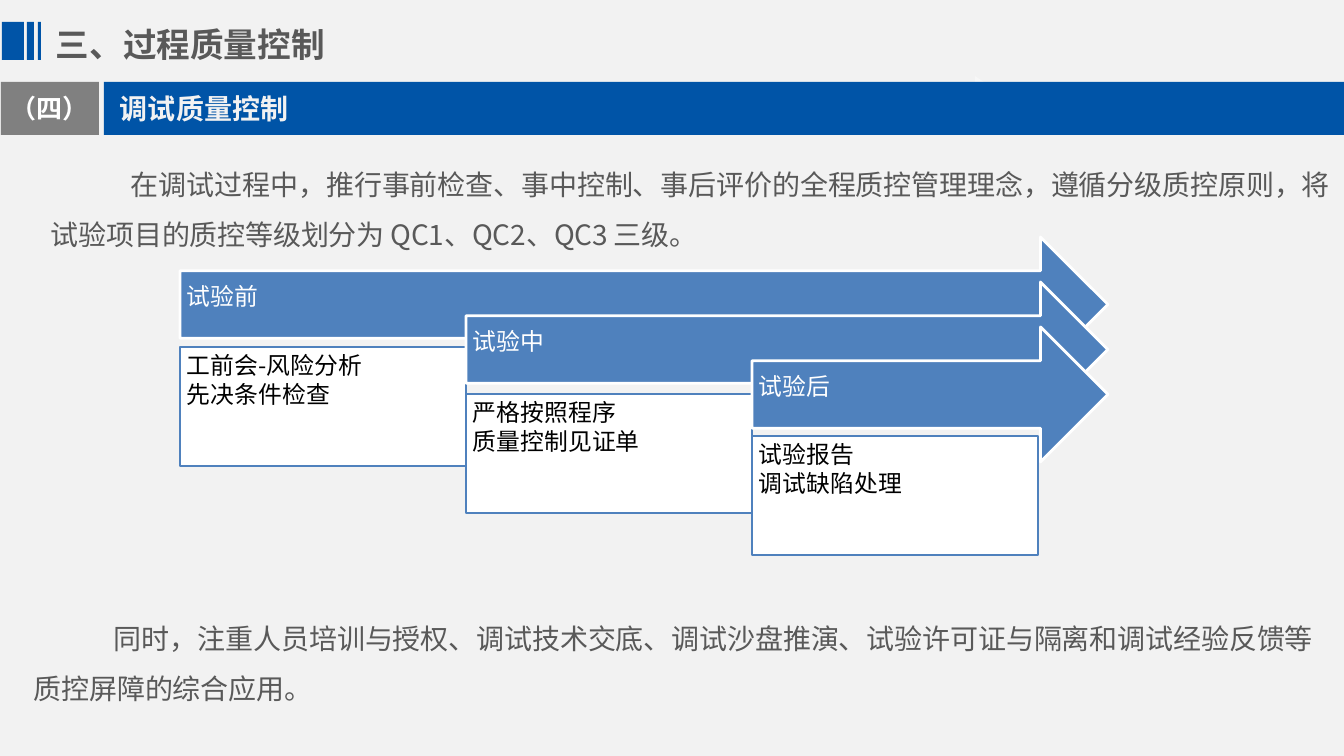
from lxml.etree import SubElement
from pptx import Presentation
from pptx.dml.color import RGBColor
from pptx.enum.shapes import MSO_SHAPE as Preset
from pptx.enum.text import MSO_ANCHOR as Anchor, MSO_AUTO_SIZE as AutoSize, PP_ALIGN as Align
from pptx.oxml.ns import qn
from pptx.util import Emu, Pt

FONT = "Noto Sans CJK SC"
BLUE, STEEL, GRAY = "0054A7", "4F81BD", "595959"
PALE, WHITE, BLACK = "F2F2F2", "FFFFFF", "000000"
STAGES = [
    ("试验前", 347, ["工前会-风险分析", "先决条件检查"]),
    ("试验中", 394, ["严格按照程序", "质量控制见证单"]),
    ("试验后", 436, ["试验报告", "调试缺陷处理"]),
]


def px(length):
    """Turn pixels into EMU at 100.8 pixels to the inch."""
    return Emu(round(length * 914400 / 100.8))


def color(hex_text):
    """Turn a hex string into a colour."""
    return RGBColor.from_string(hex_text)


def prepare_frame(shape, anchor, insets):
    """Set wrapping, anchor and insets of a shape's text frame."""
    frame = shape.text_frame
    frame.word_wrap = True
    frame.auto_size = AutoSize.NONE
    frame.vertical_anchor = anchor
    frame.margin_left, frame.margin_top, frame.margin_right, frame.margin_bottom = map(px, insets)
    return frame


def add_run(paragraph, text, size, hex_text, bold=False):
    """Add one formatted run to a paragraph."""
    run = paragraph.add_run()
    run.text = text
    run.font.size = Pt(size)
    run.font.bold = bold
    run.font.color.rgb = color(hex_text)
    run.font.name = FONT
    properties = run.font._element
    SubElement(properties, qn("a:ea")).set("typeface", FONT)
    return properties


def add_block(slide, preset, box, fill, line=None):
    """Add a filled preset shape without a shadow."""
    shape = slide.shapes.add_shape(preset, *map(px, box))
    shape.shadow.inherit = False
    shape.fill.solid()
    shape.fill.fore_color.rgb = color(fill)
    if line:
        shape.line.color.rgb = color(line)
        shape.line.width = Pt(2)
    else:
        shape.line.fill.background()
    return shape


def add_title(slide, text):
    """Place and fill the title placeholder."""
    title = slide.shapes.title
    title.left, title.top, title.width, title.height = map(px, (49, 20, 779, 48))
    paragraph = prepare_frame(title, Anchor.TOP, (7, 4, 7, 4)).paragraphs[0]
    paragraph.alignment = Align.LEFT
    add_run(paragraph, text, 24, GRAY, True)


def add_band(slide, box, fill, text, size, hex_text, align, indent=0):
    """Add a heading band with one bold line."""
    band = add_block(slide, Preset.RECTANGLE, box, fill)
    paragraph = prepare_frame(band, Anchor.MIDDLE, (7, 4, 7, 4)).paragraphs[0]
    paragraph.alignment = align
    paragraph._p.get_or_add_pPr().set("marL", str(px(indent)))
    add_run(paragraph, text, size, hex_text, True)


def add_body(slide, left, top, text):
    """Add a justified paragraph with a first-line indent."""
    box = slide.shapes.add_textbox(*map(px, (left, top, 1298, 116)))
    paragraph = prepare_frame(box, Anchor.MIDDLE, (10, 5, 10, 5)).paragraphs[0]
    paragraph.alignment = Align.JUSTIFY
    paragraph.line_spacing = 1.5
    paragraph._p.get_or_add_pPr().set("indent", str(px(80)))
    add_run(paragraph, text, 20, GRAY).set("spc", "-20")


def add_lines(frame, lines, hex_text):
    """Write the lines of a stage into a text frame."""
    for index, text in enumerate(lines):
        paragraph = frame.add_paragraph() if index else frame.paragraphs[0]
        paragraph.alignment = Align.LEFT
        paragraph.line_spacing = 0.9
        paragraph.space_after = Pt(2)
        add_run(paragraph, text, 17, hex_text)


def add_stage(slide, index, name, card_top, lines):
    """Add a stage's arrow and the card under it."""
    left = 180 + 286 * index
    arrow = add_block(slide, Preset.RIGHT_ARROW,
                      (left, 237 + 45 * index, 1108 - left, 135), STEEL, WHITE)
    add_lines(prepare_frame(arrow, Anchor.MIDDLE, (7, 7, 28, 21)), [name], WHITE)
    card = add_block(slide, Preset.RECTANGLE, (left, card_top, 286, 119), WHITE, STEEL)
    add_lines(prepare_frame(card, Anchor.TOP, (7, 7, 7, 7)), lines, BLACK)


def main():
    """Build the slide and save it."""
    presentation = Presentation()
    presentation.slide_width, presentation.slide_height = px(1344), px(756)
    slide = presentation.slides.add_slide(presentation.slide_layouts[5])
    slide.background.fill.solid()
    slide.background.fill.fore_color.rgb = color(PALE)

    add_title(slide, "三、过程质量控制")
    for left, width in ((2, 22), (27, 7), (38, 3)):
        add_block(slide, Preset.RECTANGLE, (left, 22, width, 38), BLUE)
    add_block(slide, Preset.RIGHT_TRIANGLE, (975, 76, 9, 6), "F7F7F7")
    add_band(slide, (104, 82, 1240, 53), BLUE, "调试质量控制", 20, PALE, Align.LEFT, 9)
    add_band(slide, (1, 82, 98, 53), "808080", "（四）", 18.6, WHITE, Align.CENTER)

    add_body(slide, 41, 143, "在调试过程中，推行事前检查、事中控制、事后评价的全程质控管理理念，"
                             "遵循分级质控原则，将试验项目的质控等级划分为 QC1、QC2、QC3 三级。")
    for index, (name, card_top, lines) in enumerate(STAGES):
        add_stage(slide, index, name, card_top, lines)
    add_body(slide, 24, 597, "同时，注重人员培训与授权、调试技术交底、调试沙盘推演、"
                             "试验许可证与隔离和调试经验反馈等质控屏障的综合应用。")
    presentation.save("out.pptx")


if __name__ == "__main__":
    main()
